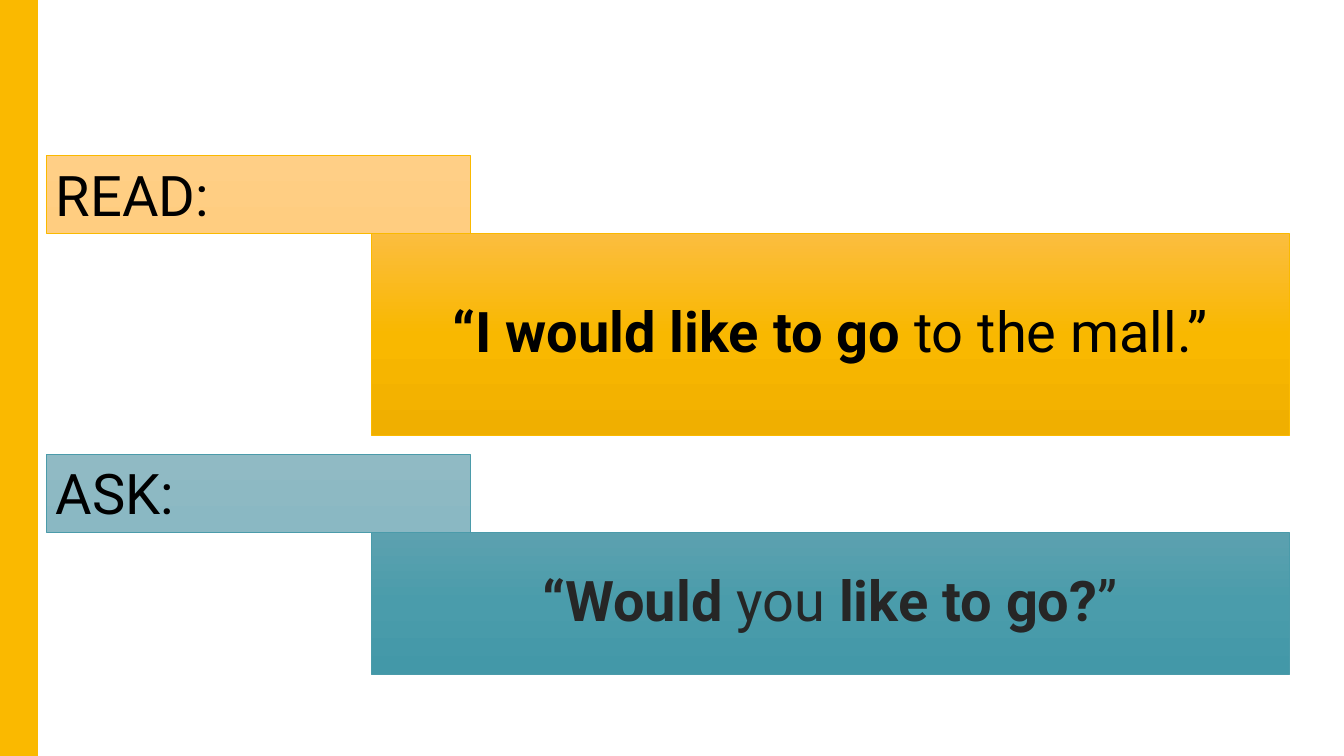
from copy import deepcopy

from pptx import Presentation
from pptx.dml.color import RGBColor
from pptx.enum.shapes import MSO_SHAPE
from pptx.enum.text import MSO_ANCHOR, PP_ALIGN
from pptx.oxml.ns import qn
from pptx.util import Pt

RECT = MSO_SHAPE.RECTANGLE
TOP, MIDDLE = MSO_ANCHOR.TOP, MSO_ANCHOR.MIDDLE
LEFT, CENTER = PP_ALIGN.LEFT, PP_ALIGN.CENTER
EMU_PER_PX = 914400 / 100.8
WIDTH, HEIGHT = 1344, 756

COLORS = {
    "amber": "FAB900", "teal": "4B9BAA", "black": "000000", "charcoal": "262626",
    "peach_top": "FFCF86", "peach_bottom": "FFCD80",
    "mist_top": "90BAC4", "mist_bottom": "8AB8C3",
    "amber_top": "FBBD3F", "amber_mid": "F9B800", "amber_bottom": "F0AF00",
    "teal_top": "5CA1AF", "teal_mid": "4A9CAB", "teal_bottom": "4398A8",
}


def px(n):
    return round(n * EMU_PER_PX)


def rgb(name):
    return RGBColor.from_string(COLORS[name])


class Deck:
    """Holds the text style and current slide, and draws its elements."""

    def __init__(self, font, size):
        self.prs = Presentation()
        self.prs.slide_width, self.prs.slide_height = px(WIDTH), px(HEIGHT)
        self.s = self.prs.slides.add_slide(self.prs.slide_layouts[6])
        self.font, self.size = font, size

    def rect(self, x, y, w, h):
        sp = self.s.shapes.add_shape(RECT, px(x), px(y), px(w), px(h))
        sp.shadow.inherit = False
        return sp

    def bar(self, x, y, w, h, color):
        sp = self.rect(x, y, w, h)
        sp.fill.solid()
        sp.fill.fore_color.rgb = rgb(color)
        sp.line.fill.background()

    def gradient(self, sp, colors):
        sp.fill.gradient()
        sp.fill.gradient_angle = 270
        stops = sp._element.spPr.find(qn("a:gradFill")).find(qn("a:gsLst"))
        for _ in colors[2:]:
            stops.append(deepcopy(stops[0]))
        for i, (stop, color) in enumerate(zip(sp.fill.gradient_stops, colors)):
            stop.position = i / (len(colors) - 1)
            stop.color.rgb = rgb(color)

    def panel(self, box, fill, line, color, runs, align, anchor, inset, spacing):
        sp = self.rect(*box)
        self.gradient(sp, fill)
        sp.line.color.rgb = rgb(line)
        sp.line.width = Pt(0.5)
        tf = sp.text_frame
        tf.word_wrap = True
        tf.vertical_anchor = anchor
        tf.margin_left = tf.margin_right = px(inset[0])
        tf.margin_top = tf.margin_bottom = px(inset[1])
        p = tf.paragraphs[0]
        p.alignment, p.line_spacing = align, spacing
        p.font.name, p.font.size = self.font, Pt(self.size)
        p.font.color.rgb = rgb(color)
        for text, bold in runs:
            r = p.add_run()
            r.text = text
            r.font.bold = bold

    def label(self, y, text, fill, line):
        self.panel((46, y, 424, 78), fill, line, "black", [(text, False)],
                   LEFT, TOP, (10, 5), 1.0)

    def sentence(self, y, h, runs, fill, line, color):
        self.panel((371, y, 918, h), fill, line, color, runs,
                   CENTER, MIDDLE, (20, 20), 0.9)


def main():
    deck = Deck("Roboto", 40)
    deck.bar(0, 0, 38, HEIGHT, "amber")
    deck.label(155, "READ:", ["peach_top", "peach_bottom"], "amber")
    deck.label(454, "ASK:", ["mist_top", "mist_bottom"], "teal")
    deck.sentence(532, 142,
                  [("“Would", True), (" you ", False), ("like to go?", True), ("”", False)],
                  ["teal_top", "teal_mid", "teal_bottom"], "teal", "charcoal")
    deck.sentence(233, 202,
                  [("“I would like to go", True), (" to the mall.”", False)],
                  ["amber_top", "amber_mid", "amber_bottom"], "amber", "black")
    deck.prs.save("out.pptx")


if __name__ == "__main__":
    main()
